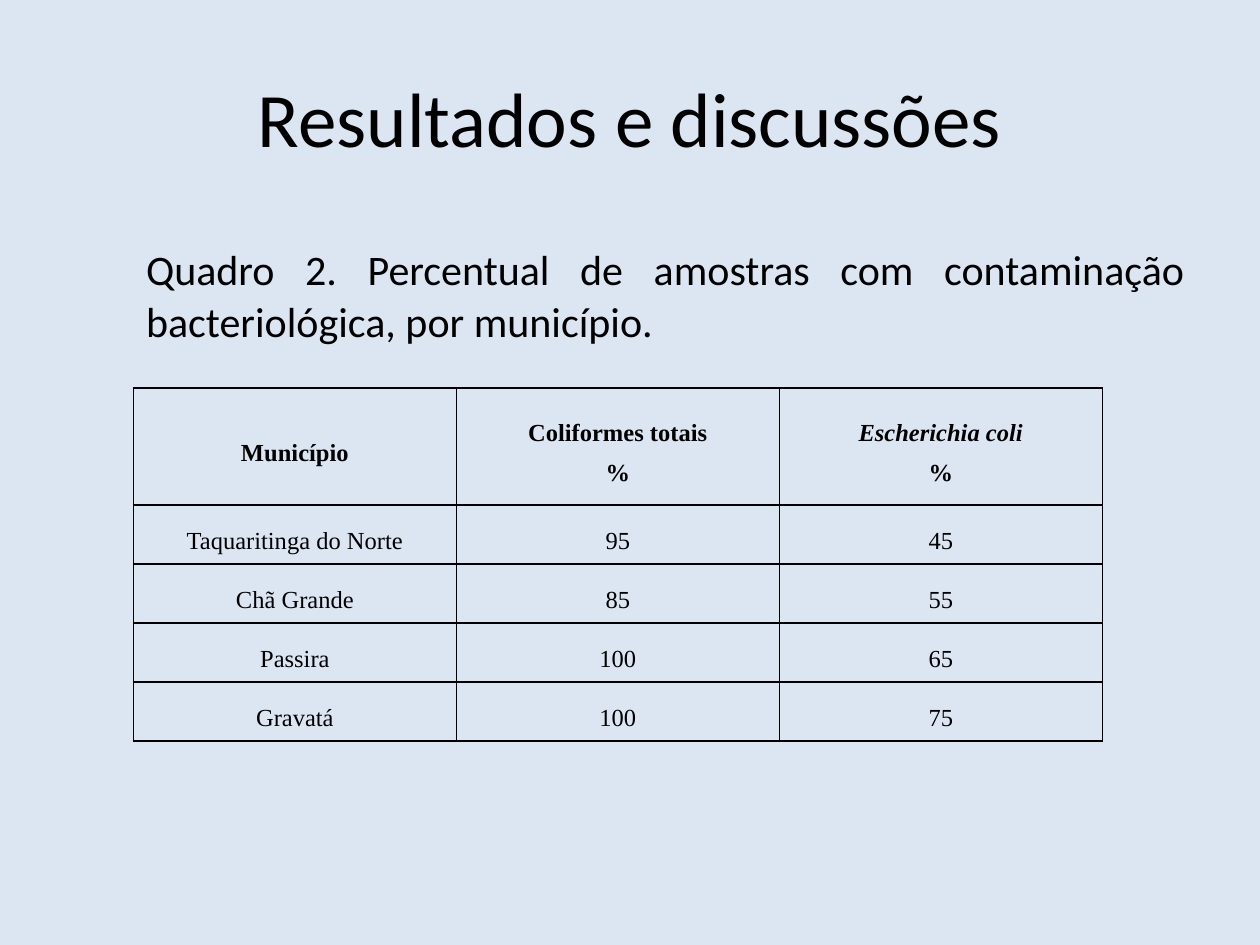
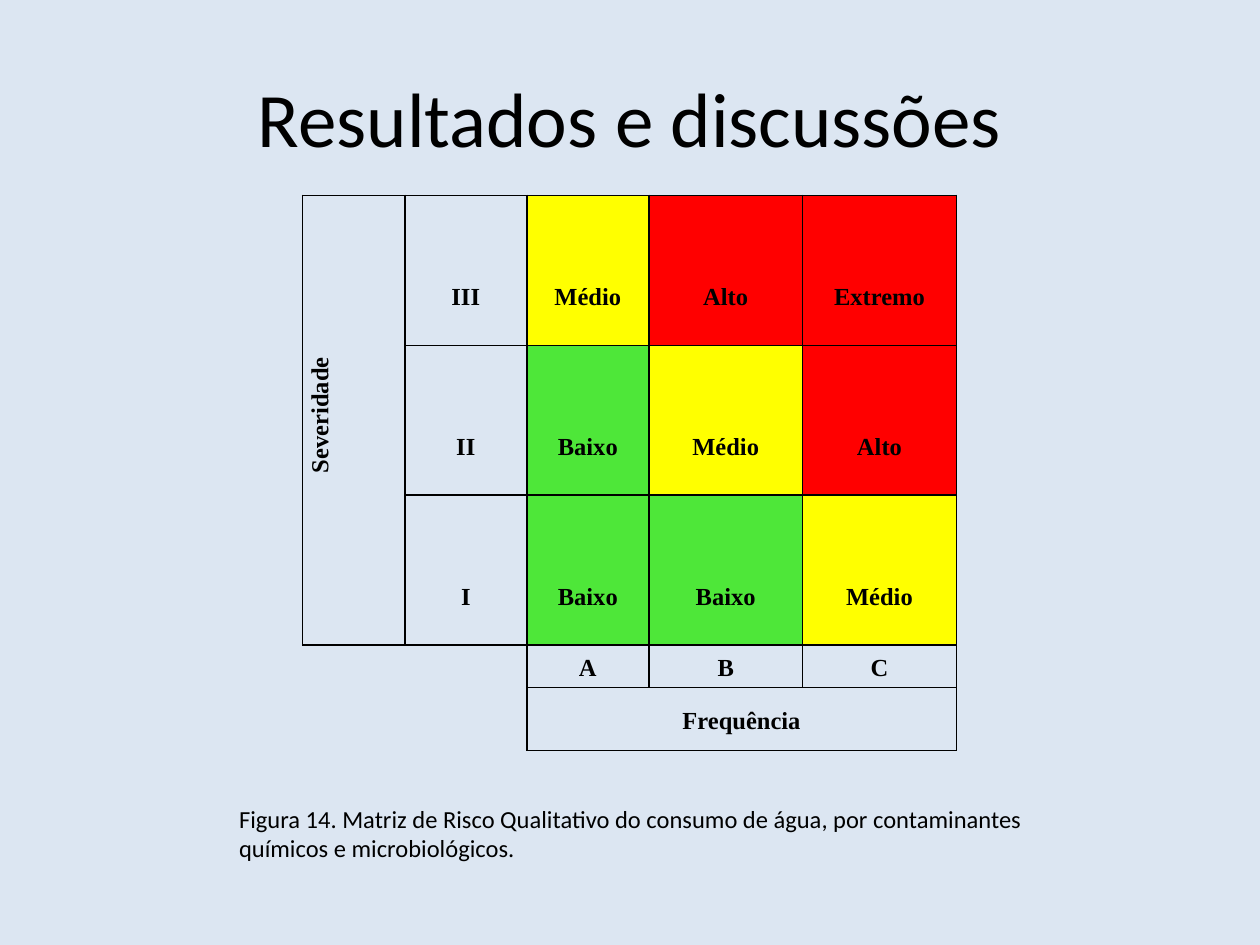
from dataclasses import dataclass

from lxml.etree import SubElement
from pptx import Presentation
from pptx.dml.color import RGBColor
from pptx.enum.text import MSO_ANCHOR as Anchor, MSO_AUTO_SIZE as AutoSize, PP_ALIGN as Align
from pptx.oxml.ns import qn
from pptx.util import Cm, Pt

COLORS = {
    "background": "DCE6F2",
    "ink": "000000",
    "Baixo": "4EE739",
    "Médio": "FFFF00",
    "Alto": "FF0000",
    "Extremo": "FF0000",
}
SANS, SERIF = "Calibri", "Times New Roman"
HEADING = "Resultados e discussões"
PLAIN_TABLE_STYLE = "{2D5ABB26-0587-4C30-8999-92F81FD0307C}"
TITLE_ONLY, TITLE_AND_BODY = 5, 1


@dataclass(frozen=True)
class Box:
    left: float
    top: float
    width: float
    height: float

    def lengths(self) -> tuple:
        return Cm(self.left), Cm(self.top), Cm(self.width), Cm(self.height)


@dataclass(frozen=True)
class Grid:
    left: float
    top: float
    columns: tuple
    rows: tuple
    line_spacing: float
    space_after: float = 0


TITLE_BOX = Box(1.27, 0.76, 22.86, 3.18)
QUADRO_BOX = Box(1.27, 4.45, 22.86, 3.3)
FIGURA_BOX = Box(4.57, 16.08, 16.46, 1.45)
MUNICIPIOS_GRID = Grid(2.69, 7.82, (6.51,) * 3, (2.36,) + (1.19,) * 4, 1.5)
RISCO_GRID = Grid(6.1, 3.94, (2.06, 2.46, 2.46, 3.1, 3.1),
                  (3.02,) * 3 + (0.86, 1.27), 1.15, 10)

MUNICIPIOS = (
    ("Município", "Coliformes totais\n%", "Escherichia coli\n%"),
    ("Taquaritinga do Norte", "95", "45"),
    ("Chã Grande", "85", "55"),
    ("Passira", "100", "65"),
    ("Gravatá", "100", "75"),
)
RISCO = (
    ("Severidade", "III", "Médio", "Alto", "Extremo"),
    ("", "II", "Baixo", "Médio", "Alto"),
    ("", "I", "Baixo", "Baixo", "Médio"),
    ("", "", "A", "B", "C"),
    ("", "", "Frequência", "", ""),
)


def format_text(frame, font: str, size: float, align: Align, bold: bool = False) -> None:
    for paragraph in frame.paragraphs:
        paragraph.alignment = align
        for run in paragraph.runs:
            run.font.name, run.font.size, run.font.bold = font, Pt(size), bold
            run.font.color.rgb = RGBColor.from_string(COLORS["ink"])


def place(shape, box: Box) -> None:
    shape.left, shape.top, shape.width, shape.height = box.lengths()


def add_titled_slide(prs, layout: int):
    slide = prs.slides.add_slide(prs.slide_layouts[layout])
    title = slide.shapes.title
    place(title, TITLE_BOX)
    title.text_frame.text = HEADING
    title.text_frame.vertical_anchor = Anchor.MIDDLE
    title.text_frame.auto_size = AutoSize.NONE
    format_text(title.text_frame, SANS, 44, Align.CENTER)
    return slide


def add_grid(slide, grid: Grid):
    box = Box(grid.left, grid.top, sum(grid.columns), sum(grid.rows))
    frame = slide.shapes.add_table(len(grid.rows), len(grid.columns), *box.lengths())
    table = frame.table
    table.first_row = table.horz_banding = False
    table._tbl.tblPr.find(qn("a:tableStyleId")).text = PLAIN_TABLE_STYLE
    for column, width in zip(table.columns, grid.columns):
        column.width = Cm(width)
    for row, height in zip(table.rows, grid.rows):
        row.height = Cm(height)
    return table


def draw_borders(cell) -> None:
    properties = cell._tc.get_or_add_tcPr()
    for position, side in enumerate(("lnL", "lnR", "lnT", "lnB")):
        line = SubElement(properties, qn(f"a:{side}"), w=str(Pt(1)))
        fill = SubElement(line, qn("a:solidFill"))
        SubElement(fill, qn("a:srgbClr"), val=COLORS["ink"])
        properties.insert(position, line)


def fill_cell(cell, text: str, grid: Grid, bold: bool) -> None:
    cell.text_frame.text = text
    cell.vertical_anchor = Anchor.MIDDLE
    cell.margin_left = cell.margin_right = Cm(0.18)
    cell.margin_top = cell.margin_bottom = 0
    format_text(cell.text_frame, SERIF, 14, Align.CENTER, bold)
    for paragraph in cell.text_frame.paragraphs:
        paragraph.line_spacing = grid.line_spacing
        paragraph.space_after = Pt(grid.space_after)
    if text in COLORS:
        cell.fill.solid()
        cell.fill.fore_color.rgb = RGBColor.from_string(COLORS[text])
    else:
        cell.fill.background()


def build_municipios(prs) -> None:
    slide = add_titled_slide(prs, TITLE_AND_BODY)

    # Table heading
    quadro = slide.placeholders[1]
    place(quadro, QUADRO_BOX)
    frame = quadro.text_frame
    frame.text = ("Quadro 2. Percentual de amostras com contaminação "
                  "bacteriológica, por município.")
    frame.auto_size = AutoSize.NONE
    frame.margin_top = Cm(0.4)
    format_text(frame, SANS, 24, Align.JUSTIFY)
    paragraph = frame.paragraphs[0]
    paragraph.space_before = Pt(0)
    paragraph.line_spacing = 1.05
    properties = paragraph._p.get_or_add_pPr()
    properties.set("marL", str(Cm(1.42)))
    properties.set("indent", "0")
    SubElement(properties, qn("a:buNone"))

    # Contamination by municipality
    table = add_grid(slide, MUNICIPIOS_GRID)
    for r, values in enumerate(MUNICIPIOS):
        for c, text in enumerate(values):
            fill_cell(table.cell(r, c), text, MUNICIPIOS_GRID, bold=r == 0)
            draw_borders(table.cell(r, c))
    species = table.cell(0, 2).text_frame.paragraphs[0]
    species.runs[0].font.italic = True


def build_risco(prs) -> None:
    slide = add_titled_slide(prs, TITLE_ONLY)

    # Figure caption
    figura = slide.shapes.add_textbox(*FIGURA_BOX.lengths())
    figura.text_frame.word_wrap = True
    figura.text_frame.text = ("Figura 14. Matriz de Risco Qualitativo do consumo de água, "
                              "por contaminantes químicos e microbiológicos.")
    format_text(figura.text_frame, SANS, 14, Align.LEFT)

    # Risk matrix: the lower left corner stays open
    table = add_grid(slide, RISCO_GRID)
    for r, levels in enumerate(RISCO):
        for c, text in enumerate(levels):
            cell = table.cell(r, c)
            fill_cell(cell, text, RISCO_GRID, bold=True)
            if r < 3 and c > 0:
                cell.margin_top = Cm(1)
            if r < 3 or c > 1:
                draw_borders(cell)

    # Axis names
    severidade = table.cell(0, 0)
    severidade.merge(table.cell(2, 0))
    severidade._tc.get_or_add_tcPr().set("vert", "vert270")
    severidade.text_frame.paragraphs[0]._p.get_or_add_pPr().set("marL", str(Cm(0.2)))
    table.cell(4, 2).merge(table.cell(4, 4))


def main() -> None:
    prs = Presentation()
    prs.slide_width, prs.slide_height = Cm(25.4), Cm(19.05)
    background = prs.slide_master.background.fill
    background.solid()
    background.fore_color.rgb = RGBColor.from_string(COLORS["background"])
    build_municipios(prs)
    build_risco(prs)
    prs.save("out.pptx")


if __name__ == "__main__":
    main()
